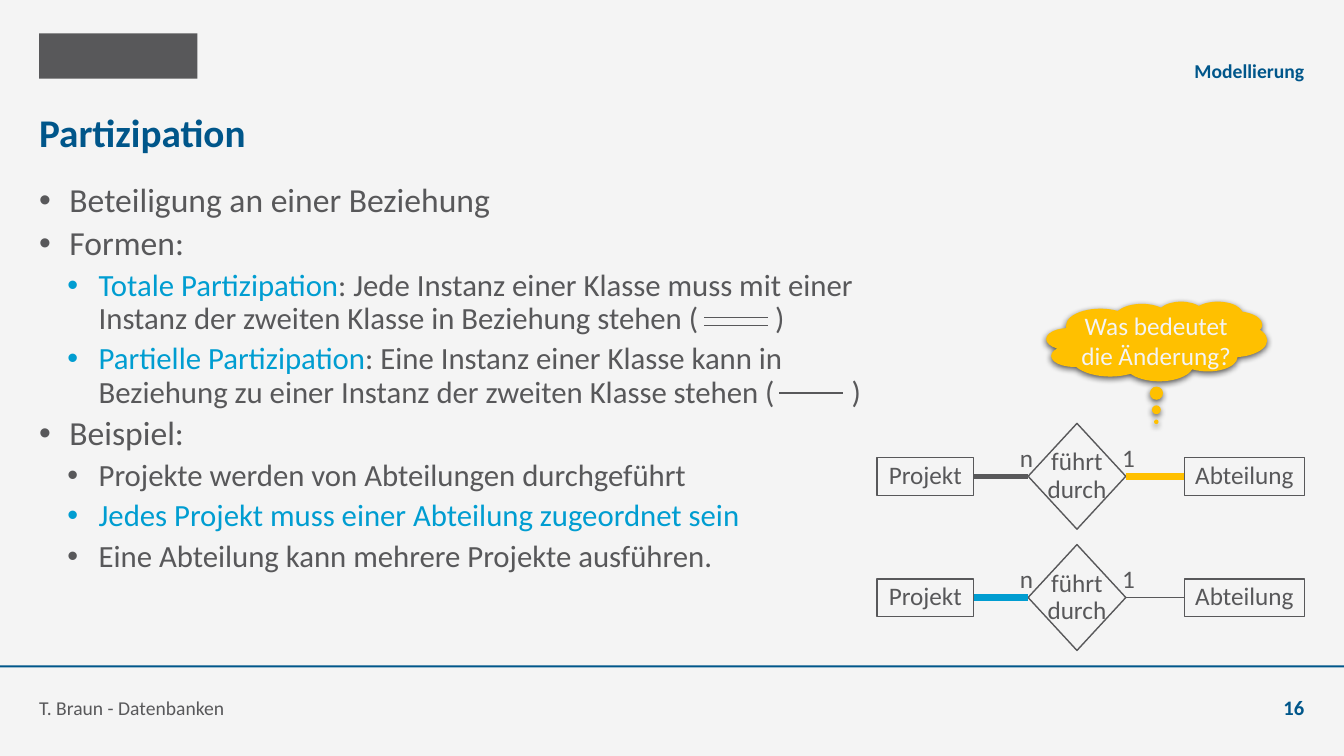
import pptx
import pptx.util
import pptx.dml.color
import pptx.enum.shapes
import pptx.enum.text
import pptx.oxml
import pptx.oxml.ns
from dataclasses import dataclass

Pt = pptx.util.Pt
Shape = pptx.enum.shapes.MSO_SHAPE
Align = pptx.enum.text.PP_ALIGN
Anchor = pptx.enum.text.MSO_ANCHOR
NAMESPACE = pptx.oxml.ns.nsdecls("a")


@dataclass(frozen=True)
class Theme:
    font: str = "Calibri"
    paper: str = "F4F4F4"
    ink: str = "58585A"
    navy: str = "00568A"
    cyan: str = "009DD1"
    amber: str = "FFC000"
    title: float = 28
    body: float = 24
    detail: float = 22
    label: float = 18
    small: float = 14
    number: float = 14.7


THEME = Theme()


def rgb(value):
    return pptx.dml.color.RGBColor.from_string(value)


def write_text(shape, paragraphs, size, color=THEME.ink, bold=False, align=Align.LEFT,
               anchor=Anchor.TOP, insets=(0, 0), wrap=True, line_spacing=1.0, space_before=0):
    frame = shape.text_frame
    frame.auto_size = pptx.enum.text.MSO_AUTO_SIZE.NONE
    frame.word_wrap = wrap
    frame.vertical_anchor = anchor
    frame.margin_left = frame.margin_right = Pt(insets[0])
    frame.margin_top = frame.margin_bottom = Pt(insets[1])
    for index, runs in enumerate(paragraphs):
        paragraph = frame.add_paragraph() if index else frame.paragraphs[0]
        paragraph.alignment = align
        paragraph.line_spacing = line_spacing
        paragraph.space_before = Pt(space_before)
        paragraph.space_after = Pt(0)
        for item in [(runs, {})] if isinstance(runs, str) else runs:
            content, changes = item
            run = paragraph.add_run()
            run.text = content
            run.font.name = THEME.font
            run.font.size = Pt(changes.get("size", size))
            run.font.bold = bold
            run.font.color.rgb = rgb(changes.get("color", color))
            if "tracking" in changes:
                run._r.get_or_add_rPr().set("spc", str(round(changes["tracking"] * 100)))


def place(shape, left, top, width, height):
    shape.left, shape.top, shape.width, shape.height = map(Pt, (left, top, width, height))
    return shape


def add_text(slide, box, paragraphs, **text_format):
    write_text(slide.shapes.add_textbox(*map(Pt, box)), paragraphs, **text_format)


def add_shape(slide, kind, box, fill, outline=None):
    shape = slide.shapes.add_shape(kind, *map(Pt, box))
    shape.shadow.inherit = False
    shape.fill.solid()
    shape.fill.fore_color.rgb = rgb(fill)
    if outline:
        shape.line.color.rgb = rgb(outline)
        shape.line.width = Pt(1)
    else:
        shape.line.fill.background()
    return shape


def add_line(slide, start, end, y, color=THEME.ink, weight=1):
    line = slide.shapes.add_connector(
        pptx.enum.shapes.MSO_CONNECTOR.STRAIGHT, Pt(start), Pt(y), Pt(end), Pt(y))
    line.line.color.rgb = rgb(color)
    line.line.width = Pt(weight)
    line._element.spPr.append(pptx.oxml.parse_xml(f"<a:effectLst {NAMESPACE}/>"))


def add_header(slide, left, top, width):
    add_shape(slide, Shape.RECTANGLE, (left, top, 113, 32.4), THEME.ink)
    add_text(slide, (left, top + 7.2, width, 28), ["Modellierung"], size=THEME.small,
             color=THEME.navy, bold=True, align=Align.RIGHT, anchor=Anchor.BOTTOM)
    title = place(slide.shapes.title, left, top + 47.5, width, 45.4)
    write_text(title, ["Partizipation"], size=THEME.title, color=THEME.navy, bold=True,
               anchor=Anchor.MIDDLE)


def add_footer(slide, left, top, width):
    add_shape(slide, Shape.RECTANGLE, (0, top, 960, 1.5), THEME.navy)
    add_text(slide, (left, top + 10.8, 662, 28), ["T. Braun - Datenbanken"],
             size=THEME.small, anchor=Anchor.BOTTOM)
    add_text(slide, (left + width - 57, top + 10.8, 57, 28), ["16"], size=THEME.number,
             color=THEME.navy, bold=True, align=Align.RIGHT, anchor=Anchor.BOTTOM)


def set_bullet(paragraph, level, color):
    paragraph.level = level
    properties = paragraph._p.get_or_add_pPr()
    properties.set("marL", str(Pt((21.6, 42.5)[level])))
    properties.set("indent", str(Pt((-21.6, -22.3)[level])))
    for markup in (f'<a:buClr {NAMESPACE}><a:srgbClr val="{color}"/></a:buClr>',
                   f'<a:buFont {NAMESPACE} typeface="Arial"/>',
                   f'<a:buChar {NAMESPACE} char="•"/>'):
        properties.append(pptx.oxml.parse_xml(markup))


def add_body(slide, left, top, width, height):
    accent = {"color": THEME.cyan}
    gap = (" ", {"tracking": 49.7})
    close = (")", {})
    entries = [
        (0, [("Beteiligung an einer Beziehung", {})]),
        (0, [("Formen:", {})]),
        (1, [("Totale Partizipation", accent),
             (": Jede Instanz einer Klasse muss mit einer Instanz der zweiten Klasse "
              "in Beziehung stehen (", {}), gap, close]),
        (1, [("Partielle Partizipation", accent),
             (": Eine Instanz einer Klasse kann in Beziehung zu einer Instanz der "
              "zweiten Klasse stehen (", {}), gap, close]),
        (0, [("Beispiel:", {})]),
        (1, [("Projekte werden von Abteilungen durchgeführt", {})]),
        (1, [("Jedes Projekt muss einer Abteilung zugeordnet sein", accent)]),
        (1, [("Eine Abteilung kann mehrere Projekte ausführen.", {})]),
    ]
    sizes = (THEME.body, THEME.detail)
    paragraphs = [[(content, {"size": sizes[level], **changes}) for content, changes in runs]
                  for level, runs in entries]
    body = place(slide.placeholders[1], left, top, width, height)
    write_text(body, paragraphs, size=THEME.body, line_spacing=0.9, space_before=5)
    for paragraph, (level, runs) in zip(body.text_frame.paragraphs, entries):
        set_bullet(paragraph, level, runs[0][1].get("color", THEME.ink))
    for start, y in ((475.2, 95.8), (475.2, 101.5), (528.5, 149.8)):
        add_line(slide, left + start, left + start + 45.4, top + y)


def add_question(slide, left, top, width, height):
    cloud = add_shape(slide, Shape.CLOUD_CALLOUT, (left, top, width, height), THEME.amber)
    cloud.adjustments[0] = -0.002
    cloud.adjustments[1] = 1.012
    effects = cloud._element.spPr.find(pptx.oxml.ns.qn("a:effectLst"))
    effects.append(pptx.oxml.parse_xml(
        f'<a:outerShdw {NAMESPACE} blurRad="{Pt(4.5)}" dist="{Pt(1.5)}" dir="5400000" '
        'rotWithShape="0"><a:srgbClr val="000000"><a:alpha val="63000"/></a:srgbClr>'
        '</a:outerShdw>'))
    add_text(slide, (left + 11.5, top + 2.9, width - 23.8, height - 5.8),
             ["Was bedeutet die Änderung?"], size=THEME.label, color=THEME.paper,
             align=Align.CENTER, insets=(7.2, 3.6))


def add_relationship(slide, left, top, project_line, department_line):
    label = {"size": THEME.label, "align": Align.CENTER, "wrap": False, "line_spacing": 0.9}
    middle = top + 38
    for name, offset, width in (("Projekt", 0, 69.1), ("Abteilung", 219.6, 85.7)):
        entity = add_shape(slide, Shape.RECTANGLE, (left + offset, middle - 13.5, width, 27),
                           THEME.paper, THEME.ink)
        write_text(entity, [name], anchor=Anchor.MIDDLE, insets=(7.2, 3.6), **label)
    for mark, offset in (("n", 95), ("1", 167.8)):
        add_text(slide, (left + offset, top + 12.2, 23.8, 27), [mark], insets=(7.2, 3.6), **label)
    diamond = add_shape(slide, Shape.DIAMOND, (left + 108, top, 69.8, 75.6),
                        THEME.paper, THEME.ink)
    write_text(diamond, ["führt", "durch"], anchor=Anchor.MIDDLE, **label)
    add_line(slide, left + 69.1, left + 108, middle, *project_line)
    add_line(slide, left + 177.8, left + 219.6, middle, *department_line)


def main():
    presentation = pptx.Presentation()
    presentation.slide_width, presentation.slide_height = Pt(960), Pt(540)
    slide = presentation.slides.add_slide(presentation.slide_layouts[1])
    slide.background.fill.solid()
    slide.background.fill.fore_color.rgb = rgb(THEME.paper)
    add_header(slide, 28, 23.8, 903.7)
    add_body(slide, 28, 131, 592.6, 334)
    add_question(slide, 747.4, 215.3, 157.7, 56.9)
    relationships = [((THEME.ink, 3.5), (THEME.amber, 5)), ((THEME.cyan, 5), (THEME.ink, 1))]
    for row, lines in enumerate(relationships):
        add_relationship(slide, 626.4, 302.4 + row * 86.6, *lines)
    add_footer(slide, 28, 475.2, 903.7)
    presentation.save("out.pptx")


if __name__ == "__main__":
    main()
